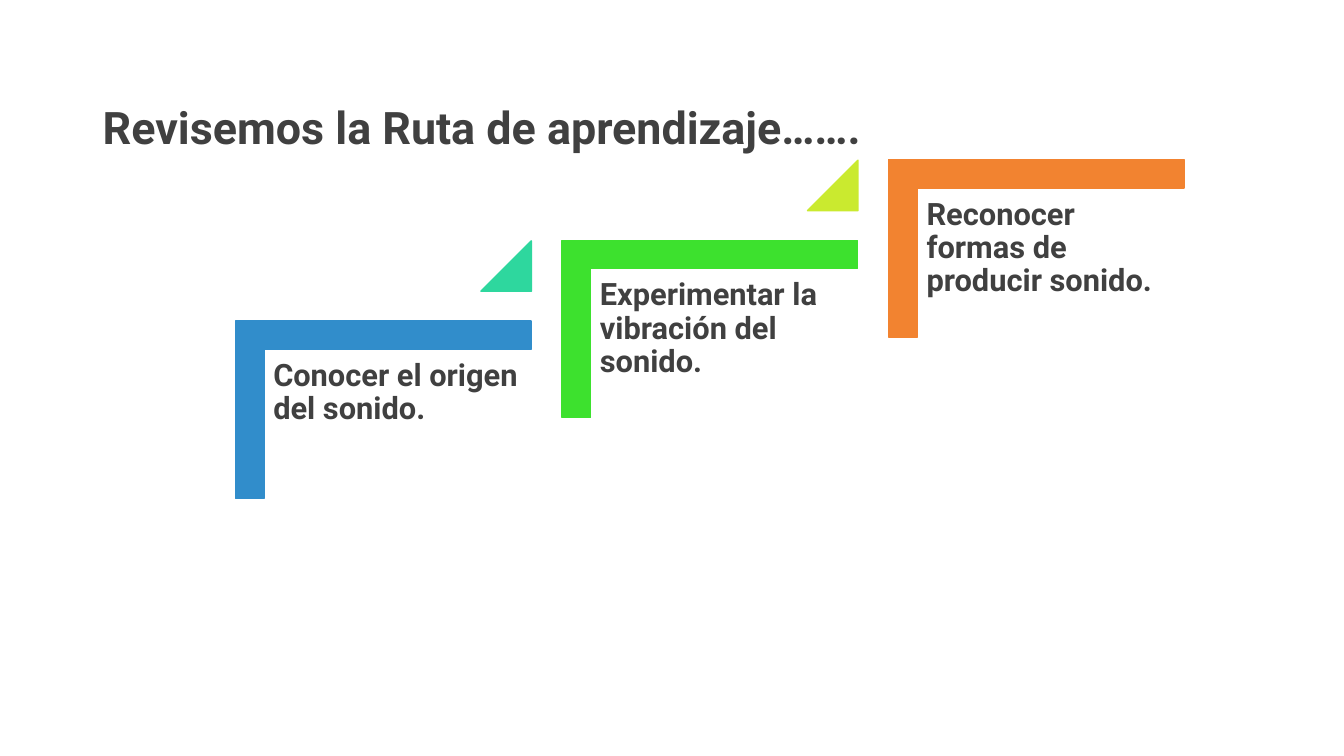
from pptx import Presentation, util as u
from pptx.dml.color import RGBColor
from pptx.enum import shapes, text

PX = 9144
hues = {
    "ink": "404040",
    "blue": "318DCB",
    "teal": "2ED79E",
    "green": "3DE12E",
    "lime": "CAEA2F",
    "orange": "F28330",
}

deck = Presentation()
deck.slide_width = u.Emu(1333 * PX)
deck.slide_height = u.Emu(750 * PX)
slide = deck.slides.add_slide(deck.slide_layouts[6])


def write(box, words, size, pad, anchor):
    area = slide.shapes.add_textbox(*[u.Emu(n * PX) for n in box])
    frame = area.text_frame
    frame.word_wrap = True
    frame.vertical_anchor = anchor
    frame.margin_left = frame.margin_right = u.Emu(pad[0] * PX)
    frame.margin_top = frame.margin_bottom = u.Emu(pad[1] * PX)
    para = frame.paragraphs[0]
    para.line_spacing = 0.9
    run = para.add_run()
    run.text = words
    run.font.name = "Roboto"
    run.font.size = u.Pt(size)
    run.font.bold = True
    run.font.color.rgb = RGBColor.from_string(hues["ink"])


def draw(kind, box, hue):
    shape = slide.shapes.add_shape(kind, *[u.Emu(n * PX) for n in box])
    shape.shadow.inherit = False
    shape.fill.solid()
    shape.fill.fore_color.rgb = RGBColor.from_string(hues[hue])
    shape.line.color.rgb = RGBColor.from_string(hues[hue])
    shape.line.width = u.Pt(1)
    return shape


write((92, 40, 1075, 118), "Revisemos la Ruta de aprendizaje…….", 32,
      (10, 5), text.MSO_ANCHOR.BOTTOM)

steps = [
    ("Conocer el origen del sonido.", "blue", "teal"),
    ("Experimentar la vibración del sonido.", "green", "lime"),
    ("Reconocer formas de producir sonido.", "orange", None),
]

for i, (words, hue, tip) in enumerate(steps):
    x = 292 + 324 * i
    y = 260 - 80 * i
    bend = draw(shapes.MSO_SHAPE.CORNER, (x, y, 176, 293), hue)
    bend.rotation = 90
    for k in range(2):
        bend.adjustments[k] = 0.16
    write((x - 30, y + 88, 265, 232), words, 22, (9, 9), text.MSO_ANCHOR.TOP)
    if tip:
        mark = draw(shapes.MSO_SHAPE.ISOSCELES_TRIANGLE,
                    (x + 185, y - 21, 50, 50), tip)
        mark.adjustments[0] = 1

deck.save("out.pptx")
